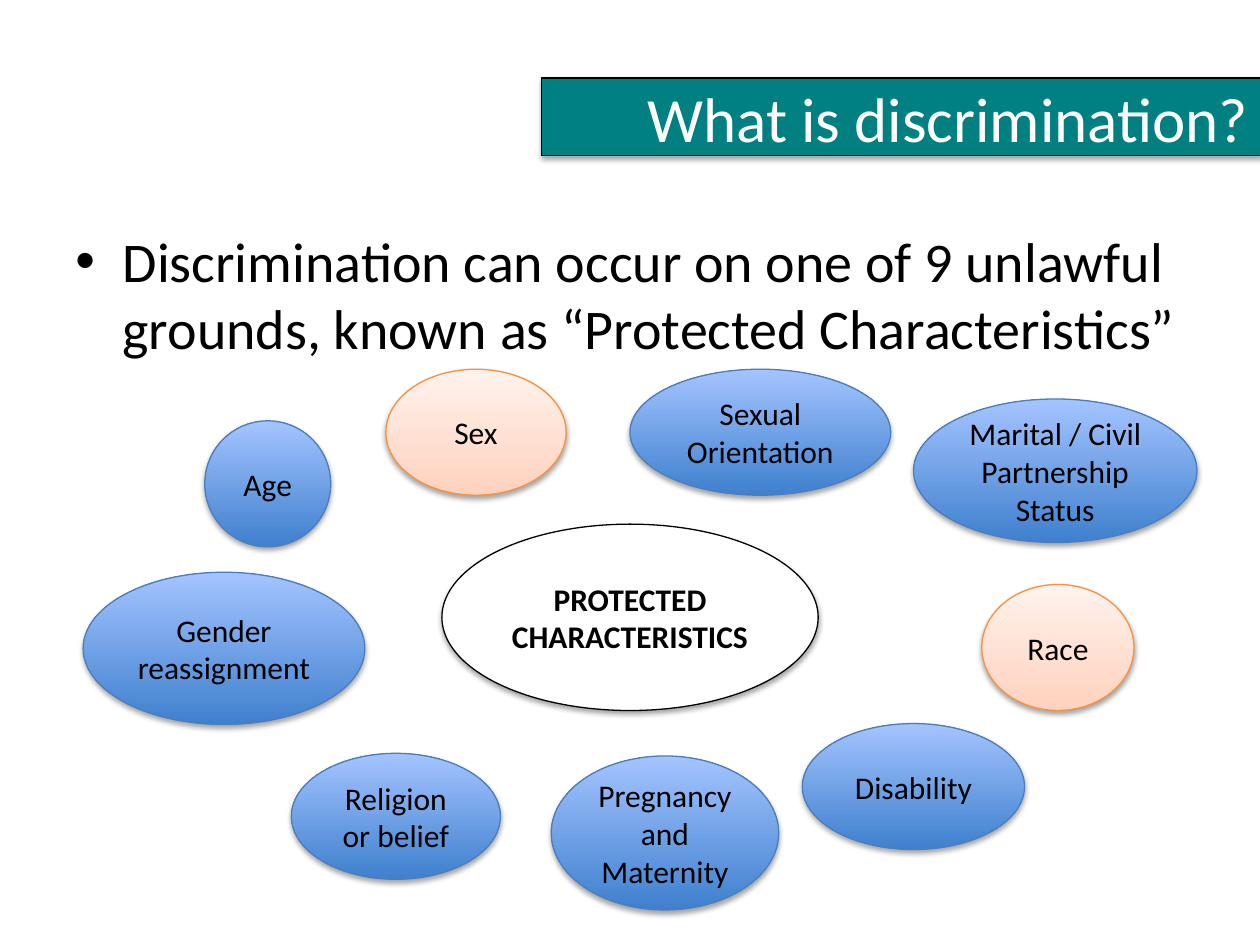
"""Build a slide on the nine protected characteristics around a central oval."""
from dataclasses import dataclass

from lxml import etree
from pptx import Presentation
from pptx import util as u
from pptx.dml import color
from pptx.enum import shapes, text
from pptx.oxml import ns


@dataclass(frozen=True)
class Theme:
    font: str = "Calibri"
    head: int = 36
    body: int = 32
    label: int = 18
    edge: float = 0.75
    black: str = "000000"
    white: str = "FFFFFF"
    teal: str = "008080"
    blue: tuple = ("3F80CE", "A4C4FF", "4B7EBC")
    peach: tuple = ("FFD2BD", "FFF2ED", "F69240")


THEME = Theme()
GROUNDS = [
    ("Age", (117, 240.5, 72, 72), THEME.blue),
    ("Sex", (220.5, 211, 103, 72), THEME.peach),
    ("Race", (561, 334, 87, 72), THEME.peach),
    ("Disability", (458.5, 413.5, 127, 72), THEME.blue),
    ("Religion or belief", (166.5, 430.5, 119.5, 72), THEME.blue),
    ("Sexual Orientation", (360, 211, 149, 72), THEME.blue),
    ("Gender reassignment", (47.5, 327, 161, 87), THEME.blue),
    ("Pregnancy and Maternity", (315, 432, 130, 88), THEME.blue),
    ("Marital / Civil Partnership Status", (522, 228, 162, 82), THEME.blue),
]


def rgb(code):
    """Turn a hex code into a colour."""
    return color.RGBColor.from_string(code)


def write(shape, words, size=THEME.label, ink=THEME.black, bold=False,
          align=text.PP_ALIGN.CENTER, anchor=text.MSO_ANCHOR.MIDDLE):
    """Put formatted text in a shape and return its paragraph."""
    frame = shape.text_frame
    frame.word_wrap = True
    frame.auto_size = text.MSO_AUTO_SIZE.NONE
    frame.vertical_anchor = anchor
    para = frame.paragraphs[0]
    para.alignment = align
    run = para.add_run()
    run.text = words
    font = run.font
    font.name, font.size, font.bold = THEME.font, u.Pt(size), bold
    font.color.rgb = rgb(ink)
    return para


def shade(shape, alpha=35):
    """Give a shape a soft shadow straight below it."""
    shape.shadow.inherit = False
    effects = shape._element.spPr.find(ns.qn("a:effectLst"))
    outer = etree.SubElement(
        effects, ns.qn("a:outerShdw"), blurRad=str(u.Pt(3.1)),
        dist=str(u.Pt(1.8)), dir="5400000", rotWithShape="0")
    ink = etree.SubElement(outer, ns.qn("a:srgbClr"), val=THEME.black)
    etree.SubElement(ink, ns.qn("a:alpha"), val=str(alpha * 1000))


def paint(shape, fill, edge=THEME.black):
    """Fill a shape plainly, or from bottom to top, and outline it."""
    if isinstance(fill, str):
        shape.fill.solid()
        shape.fill.fore_color.rgb = rgb(fill)
    else:
        shape.fill.gradient()
        shape.fill.gradient_angle = 90
        for stop, code in zip(shape.fill.gradient_stops, fill):
            stop.color.rgb = rgb(code)
    shape.line.color.rgb = rgb(edge)
    shape.line.width = u.Pt(THEME.edge)
    shade(shape)


def banner(slide, words, box):
    """Turn the title placeholder into a coloured banner."""
    title = slide.shapes.title
    title.left, title.top, title.width, title.height = map(u.Pt, box)
    paint(title, THEME.teal)
    write(title, words, size=THEME.head, ink=THEME.white,
          align=text.PP_ALIGN.RIGHT)


def bullet(slide, words, box, indent=27):
    """Add a text box with one bulleted paragraph."""
    shape = slide.shapes.add_textbox(*map(u.Pt, box))
    para = write(shape, words, size=THEME.body, align=text.PP_ALIGN.LEFT,
                 anchor=text.MSO_ANCHOR.TOP)
    props = para._p.get_or_add_pPr()
    props.set("marL", str(u.Pt(indent)))
    props.set("indent", str(u.Pt(-indent)))
    etree.SubElement(props, ns.qn("a:buFont"), typeface="Arial")
    etree.SubElement(props, ns.qn("a:buChar"), char="•")


def oval(slide, words, box, fill, edge=THEME.black, bold=False):
    """Add a labelled oval."""
    shape = slide.shapes.add_shape(shapes.MSO_SHAPE.OVAL, *map(u.Pt, box))
    paint(shape, fill, edge)
    write(shape, words, bold=bold)


def main():
    """Build and save the slide."""
    deck = Presentation()
    deck.slide_width, deck.slide_height = u.Pt(720), u.Pt(540)
    slide = deck.slides.add_slide(deck.slide_layouts.get_by_name("Title Only"))
    banner(slide, "What is discrimination?", (309.5, 44.5, 411, 44.5))
    bullet(slide, "Discrimination can occur on one of 9 unlawful grounds, "
           "known as “Protected Characteristics”", (36, 126, 648, 356.5))
    for words, box, (low, high, edge) in GROUNDS:
        oval(slide, words, box, (low, high), edge)
    oval(slide, "PROTECTED CHARACTERISTICS", (252.5, 299.5, 215, 106.5),
         THEME.white, bold=True)
    deck.save("out.pptx")


if __name__ == "__main__":
    main()
